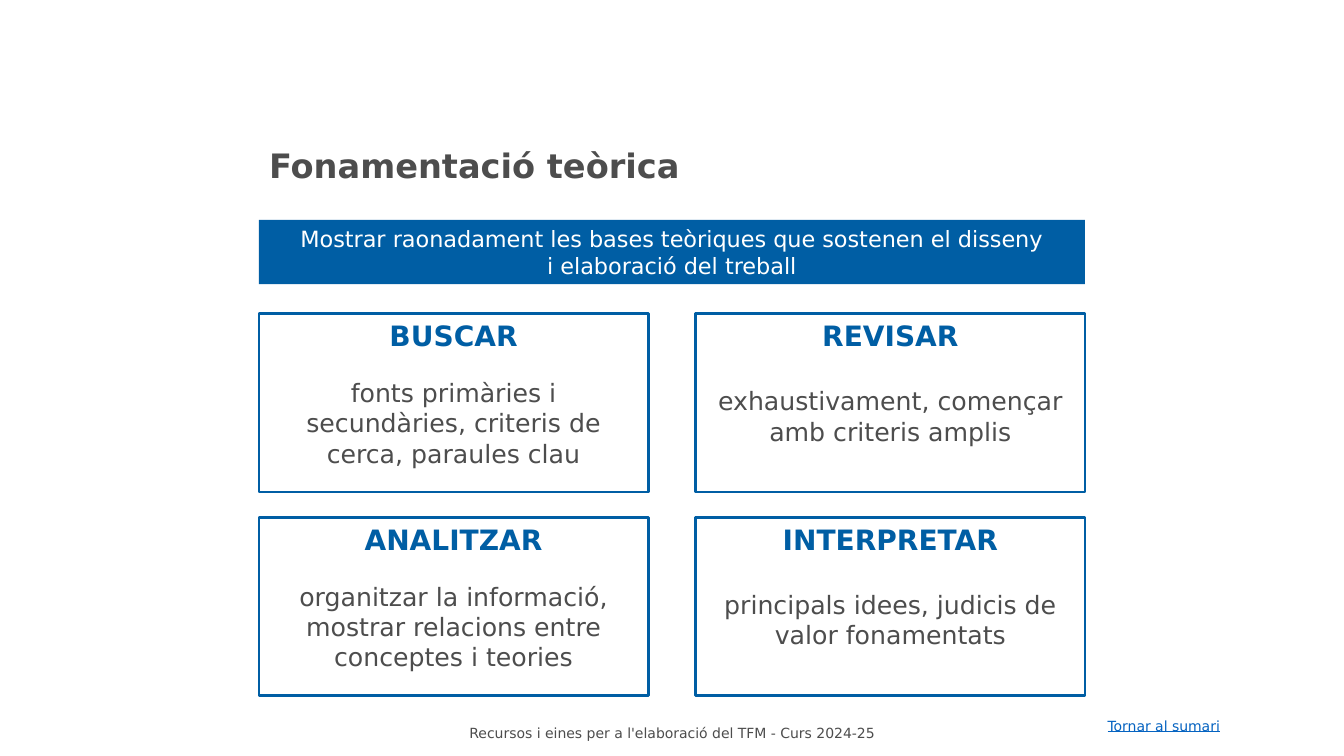
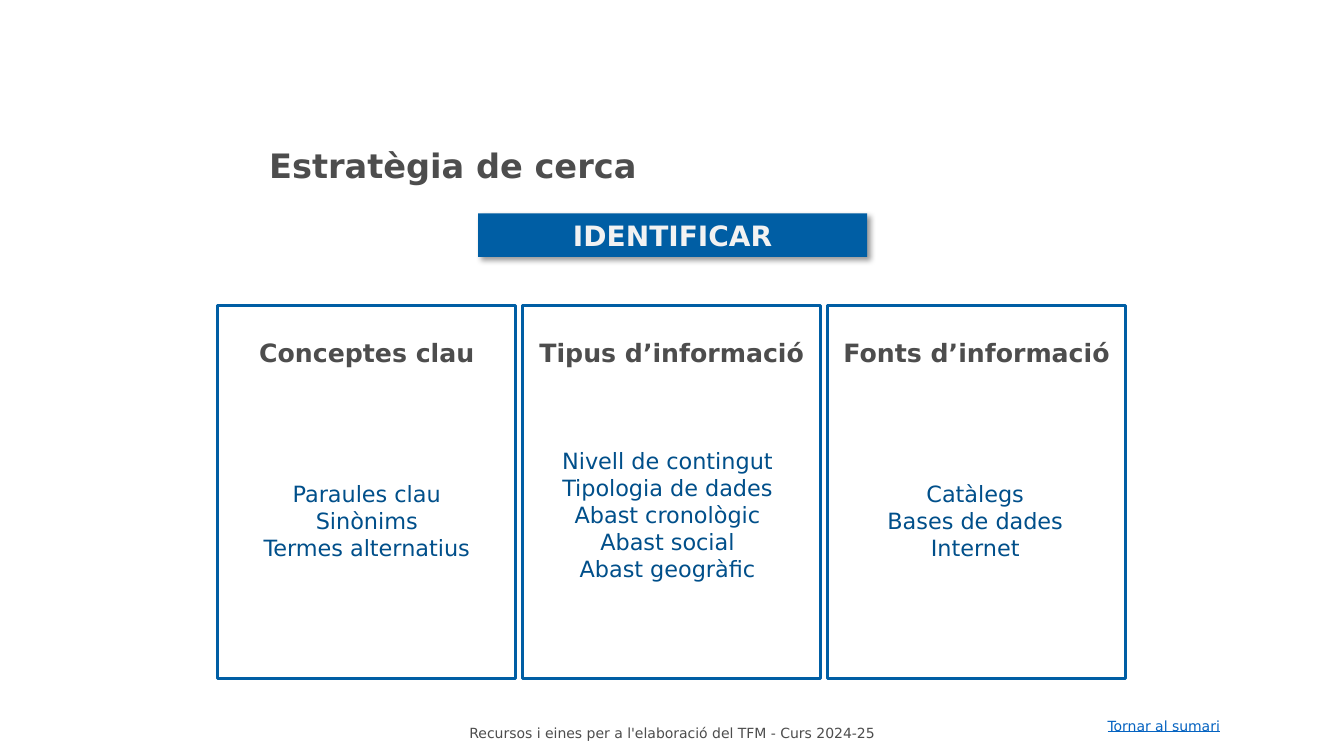
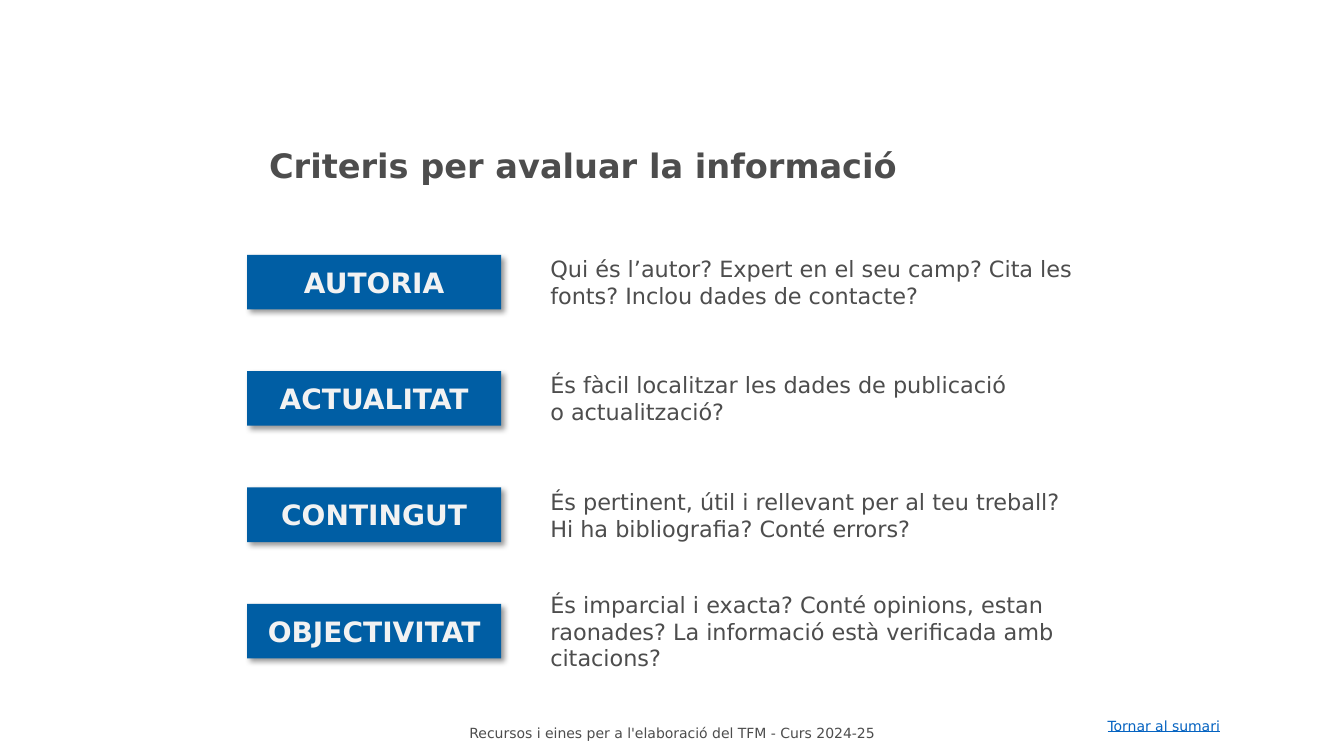
import pptx
import pptx.dml.color
import pptx.enum.shapes
import pptx.enum.text
import pptx.oxml
import pptx.oxml.ns
import pptx.util

Pt = pptx.util.Pt
ALIGN = pptx.enum.text.PP_ALIGN
ANCHOR = pptx.enum.text.MSO_ANCHOR
RECTANGLE = pptx.enum.shapes.MSO_SHAPE.RECTANGLE

FONT = "DejaVu Sans"
BLUE, DARK_BLUE, LINK_BLUE = "005EA4", "004F8A", "0563C1"
GREY, PALE, WHITE = "4D4D4D", "F2F2F2", "FFFFFF"
TITLE_BOX = (185, 100, 601, 36)
FOOTER_BOX = (270, 514, 420, 19.5)
LINK_BOX = (784, 508.5, 98, 19.5)

SHADOW = (
    '<a:outerShdw %s blurRad="50800" dist="38100" dir="2700000" algn="tl" rotWithShape="0">'
    '<a:srgbClr val="000000"><a:alpha val="40000"/></a:srgbClr></a:outerShdw>'
    % pptx.oxml.ns.nsdecls("a")
)


def color(value):
    return pptx.dml.color.RGBColor.from_string(value)


def place(shape, box):
    shape.left, shape.top, shape.width, shape.height = map(Pt, box)


def text_height(lines):
    """Height of a box holding some lines of 16 point text."""
    return 7.2 + 19.4 * lines


def write(shape, lines, size, fill, bold=False, align=ALIGN.CENTER, anchor=ANCHOR.MIDDLE):
    frame = shape.text_frame
    frame.auto_size = pptx.enum.text.MSO_AUTO_SIZE.NONE
    frame.word_wrap = True
    frame.vertical_anchor = anchor
    frame.text = "\n".join(lines)
    for para in frame.paragraphs:
        para.alignment = align
        style(para, size, fill, bold)
    return frame


def style(para, size, fill, bold):
    para.font.name = FONT
    para.font.size = Pt(size)
    para.font.bold = bold
    para.font.color.rgb = color(fill)


def add_text(page, box, lines, size, fill, **options):
    shape = page.shapes.add_textbox(*map(Pt, box))
    write(shape, lines, size, fill, **options)
    return shape


def add_panel(page, box, fill=None, line=None, shadow=False):
    shape = page.shapes.add_shape(RECTANGLE, *map(Pt, box))
    shape.shadow.inherit = False
    if shadow:
        effects = shape.element.spPr.find(pptx.oxml.ns.qn("a:effectLst"))
        effects.append(pptx.oxml.parse_xml(SHADOW))
    if fill:
        shape.fill.solid()
        shape.fill.fore_color.rgb = color(fill)
    else:
        shape.fill.background()
    if line:
        shape.line.color.rgb = color(line)
        shape.line.width = Pt(2)
    else:
        shape.line.fill.background()
    return shape


def add_tag(page, box, label):
    tag = add_panel(page, box, BLUE, shadow=True)
    write(tag, [label], 20, PALE, bold=True)


def add_page(deck, title):
    page = deck.slides.add_slide(deck.slide_layouts[5])
    place(page.shapes.title, TITLE_BOX)
    write(page.shapes.title, [title], 24, GREY, bold=True, align=ALIGN.LEFT)
    return page


def add_footer(page):
    """Draw the footer, then hand it to the layout so every page shows it."""
    footer = add_text(page, FOOTER_BOX,
                      ["Recursos i eines per a l'elaboració del TFM - Curs 2024-25"], 10, GREY)
    link = add_text(page, LINK_BOX, ["Tornar al sumari"], 10, LINK_BLUE, align=ALIGN.LEFT)
    link.text_frame.word_wrap = False
    link.text_frame.paragraphs[0].font.underline = True
    for shape in (footer, link):
        page.slide_layout.shapes.element.append(shape.element)


# Theory: a band above a grid of cards
def add_card(page, box, heading, body, gap):
    card = add_panel(page, box, WHITE, BLUE)
    frame = write(card, [heading, body], 18, GREY, anchor=ANCHOR.TOP)
    style(frame.paragraphs[0], 20, BLUE, True)
    frame.paragraphs[0].space_after = Pt(gap)


def theory_page(page, left, top):
    band = add_panel(page, (left, top, 590, text_height(2)), BLUE)
    write(band, ["Mostrar raonadament les bases teòriques que sostenen el disseny",
                 "i elaboració del treball"], 16, WHITE)
    cards = [
        ("BUSCAR", "fonts primàries i secundàries, criteris de cerca, paraules clau", 18),
        ("REVISAR", "exhaustivament, començar amb criteris amplis", 24),
        ("ANALITZAR", "organitzar la informació, mostrar relacions entre conceptes i teories", 18),
        ("INTERPRETAR", "principals idees, judicis de valor fonamentats", 24),
    ]
    for index, card in enumerate(cards):
        row, column = divmod(index, 2)
        add_card(page, (left + column * 312, top + 67 + row * 145.5, 278, 127.5), *card)


# Search strategy: three framed columns under a tag
def add_column(page, box, heading, items, shift, middle):
    left, top, width, height = box
    add_panel(page, box, line=BLUE)
    add_text(page, (left + 2, top + 19.5, width - 4, 29), [heading], 18, GREY, bold=True)
    list_height = text_height(len(items))
    add_text(page, (left + 2 + shift, top + middle - list_height / 2, width - 4, list_height),
             items, 16, DARK_BLUE)


def strategy_page(page, left, top):
    add_tag(page, (left + 186, top - 65.5, 278, 31), "IDENTIFICAR")
    columns = [
        ("Conceptes clau", ["Paraules clau", "Sinònims", "Termes alternatius"], 0, 154),
        ("Tipus d’informació", ["Nivell de contingut", "Tipologia de dades",
                                "Abast cronològic", "Abast social", "Abast geogràfic"], -3, 149.5),
        ("Fonts d’informació", ["Catàlegs", "Bases de dades", "Internet"], -1, 154),
    ]
    for index, column in enumerate(columns):
        add_column(page, (left + index * 217.8, top, 213, 266.5), *column)


# Criteria: a tag and its questions on each row
def add_criterion(page, box, label, questions, lines):
    left, top, width, height = box
    add_tag(page, (left, top, 181.5, height), label)
    question_height = text_height(lines)
    add_text(page, (left + 209.5, top + (height - question_height) / 2,
                    width - 209.5, question_height),
             questions, 16, GREY, align=ALIGN.LEFT)


def criteria_page(page, left, top):
    criteria = [
        ("AUTORIA", ["Qui és l’autor? Expert en el seu camp? Cita les fonts? "
                     "Inclou dades de contacte?"], 2),
        ("ACTUALITAT", ["És fàcil localitzar les dades de publicació", "o actualització?"], 2),
        ("CONTINGUT", ["És pertinent, útil i rellevant per al teu treball?",
                       "Hi ha bibliografia? Conté errors?"], 2),
        ("OBJECTIVITAT", ["És imparcial i exacta? Conté opinions, estan raonades? "
                          "La informació està verificada amb citacions?"], 3),
    ]
    for index, criterion in enumerate(criteria):
        add_criterion(page, (left, top + index * 83.1, 629.5, 39), *criterion)


def main():
    deck = pptx.Presentation()
    deck.slide_width, deck.slide_height = Pt(960), Pt(540)
    theory = add_page(deck, "Fonamentació teòrica")
    add_footer(theory)
    theory_page(theory, 185, 157)
    strategy_page(add_page(deck, "Estratègia de cerca"), 155.5, 218)
    criteria_page(add_page(deck, "Criteris per avaluar la informació"), 176.5, 182)
    deck.save("out.pptx")


if __name__ == "__main__":
    main()
